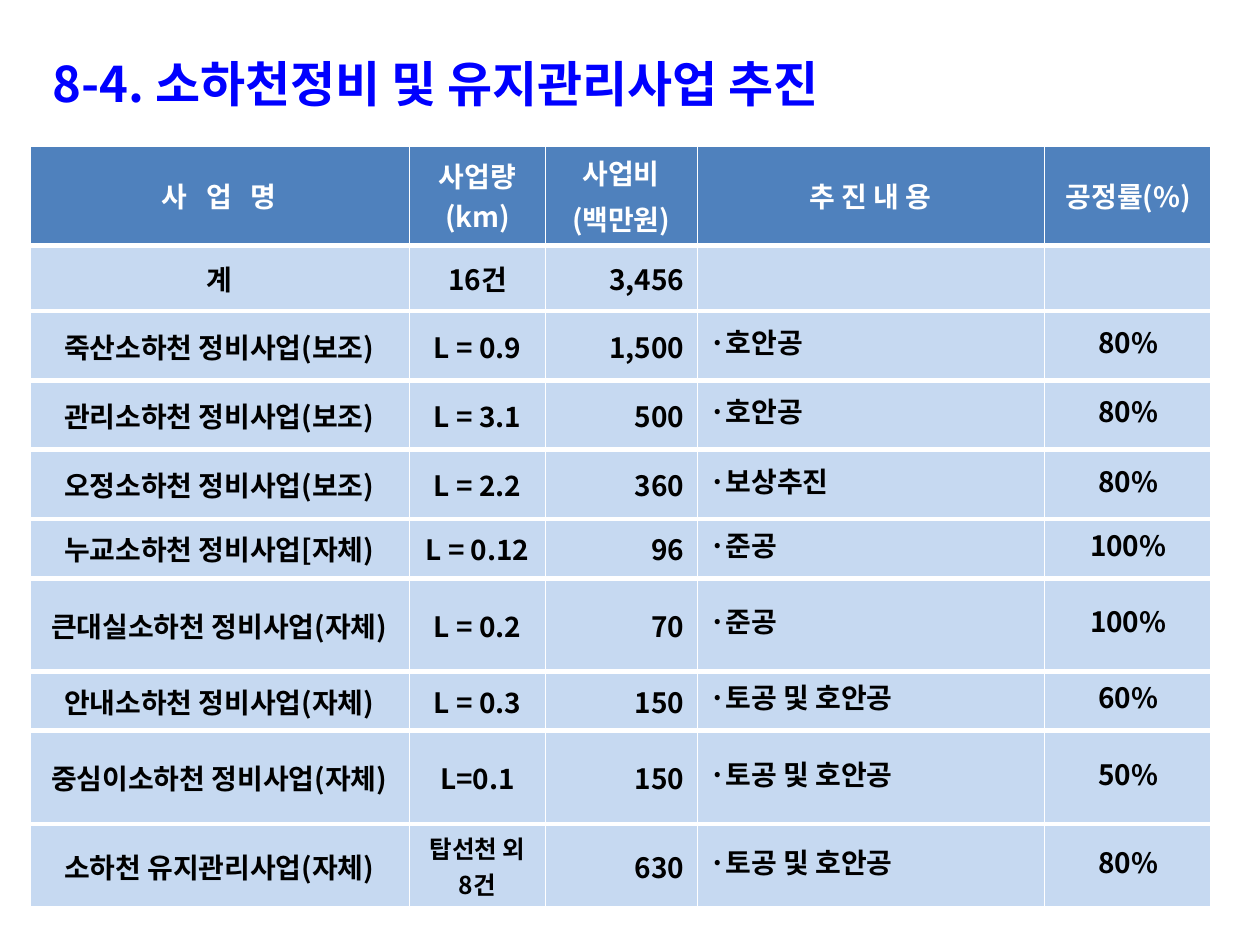
from lxml import etree
from pptx import Presentation
from pptx.dml.color import RGBColor
from pptx.enum import text
from pptx.oxml import ns
from pptx.util import Pt

FONT = "Noto Sans CJK KR"
LEFT, CENTER, RIGHT = text.PP_ALIGN.LEFT, text.PP_ALIGN.CENTER, text.PP_ALIGN.RIGHT


def add_run(paragraph, wording, size, color):
    run = paragraph.add_run()
    run.text = wording
    run.font.size = Pt(size)
    run.font.bold = True
    run.font.name = FONT
    run.font.color.rgb = RGBColor.from_string(color)
    properties = run._r.get_or_add_rPr()
    etree.SubElement(properties, ns.qn("a:ea"), typeface=FONT)
    return properties


def set_border(cell, index, side, width):
    line = etree.Element(ns.qn("a:ln" + side), w=str(Pt(width)))
    fill = etree.SubElement(line, ns.qn("a:solidFill"))
    etree.SubElement(fill, ns.qn("a:srgbClr"), val="FFFFFF")
    cell._tc.get_or_add_tcPr().insert(index, line)


deck = Presentation()
deck.slide_width, deck.slide_height = Pt(720), Pt(540)
slide = deck.slides.add_slide(deck.slide_layouts[5])

heading = slide.shapes.title
heading.left, heading.top, heading.width, heading.height = Pt(16.56), Pt(22.3), Pt(669.6), Pt(50.4)
heading.text_frame.word_wrap = True
heading.text_frame.auto_size = text.MSO_AUTO_SIZE.NONE
heading.text_frame.vertical_anchor = text.MSO_ANCHOR.MIDDLE
heading.text_frame.margin_left = Pt(13.5)
heading.text_frame.paragraphs[0].alignment = LEFT
add_run(heading.text_frame.paragraphs[0], "8-4. 소하천정비 및 유지관리사업 추진", 28, "0000FF")

projects = [
    ("사 업 명", "사업량(km)", "사업비\n(백만원)", "추 진 내 용", "공정률(%)"),
    ("계", "16건", "3,456", "", ""),
    ("죽산소하천 정비사업(보조)", "L = 0.9", "1,500", "·호안공", "80%"),
    ("관리소하천 정비사업(보조)", "L = 3.1", "500", "·호안공", "80%"),
    ("오정소하천 정비사업(보조)", "L = 2.2", "360", "·보상추진", "80%"),
    ("누교소하천 정비사업[자체)", "L = 0.12", "96", "·준공", "100%"),
    ("큰대실소하천 정비사업(자체)", "L = 0.2", "70", "·준공", "100%"),
    ("안내소하천 정비사업(자체)", "L = 0.3", "150", "·토공 및 호안공", "60%"),
    ("중심이소하천 정비사업(자체)", "L=0.1", "150", "·토공 및 호안공", "50%"),
    ("소하천 유지관리사업(자체)", "탑선천 외 8건", "630", "·토공 및 호안공", "80%"),
]
widths = [217.44, 77.76, 86.4, 198.72, 95.76]
heights = [57.6, 37.44, 39.6, 39.6, 39.6, 33.84, 39.6, 33.84, 35.28, 47.52]
alignments = [CENTER, CENTER, RIGHT, LEFT, CENTER]

status = slide.shapes.add_table(
    len(projects), len(widths), Pt(16.56), Pt(82.8), Pt(sum(widths)), Pt(sum(heights))
).table
status.horz_banding = False
for column, width in zip(status.columns, widths):
    column.width = Pt(width)
for row, height in zip(status.rows, heights):
    row.height = Pt(height)

for r, project in enumerate(projects):
    for c, wording in enumerate(project):
        cell = status.cell(r, c)
        cell.vertical_anchor = text.MSO_ANCHOR.MIDDLE
        cell.fill.solid()
        cell.fill.fore_color.rgb = RGBColor.from_string("C6D9F1" if r else "4F81BD")
        set_border(cell, 0, "L", 3 if c == 0 else 0.25)
        set_border(cell, 1, "R", 3 if c == len(widths) - 1 else 0.25)
        set_border(cell, 2, "T", 3)
        set_border(cell, 3, "B", 3)
        if not wording:
            continue
        size = 14 if wording.startswith("탑선천") else 16
        for i, line in enumerate(wording.split("\n")):
            paragraph = cell.text_frame.add_paragraph() if i else cell.text_frame.paragraphs[0]
            paragraph.alignment = alignments[c] if r else CENTER
            paragraph.space_before = Pt(size * 0.2)
            if r and c >= 3:
                paragraph.line_spacing = Pt(18)
            properties = add_run(paragraph, line, size, "000000" if r else "FFFFFF")
            if r == 0 and c == 0:
                properties.set("spc", "360")

deck.save("out.pptx")
